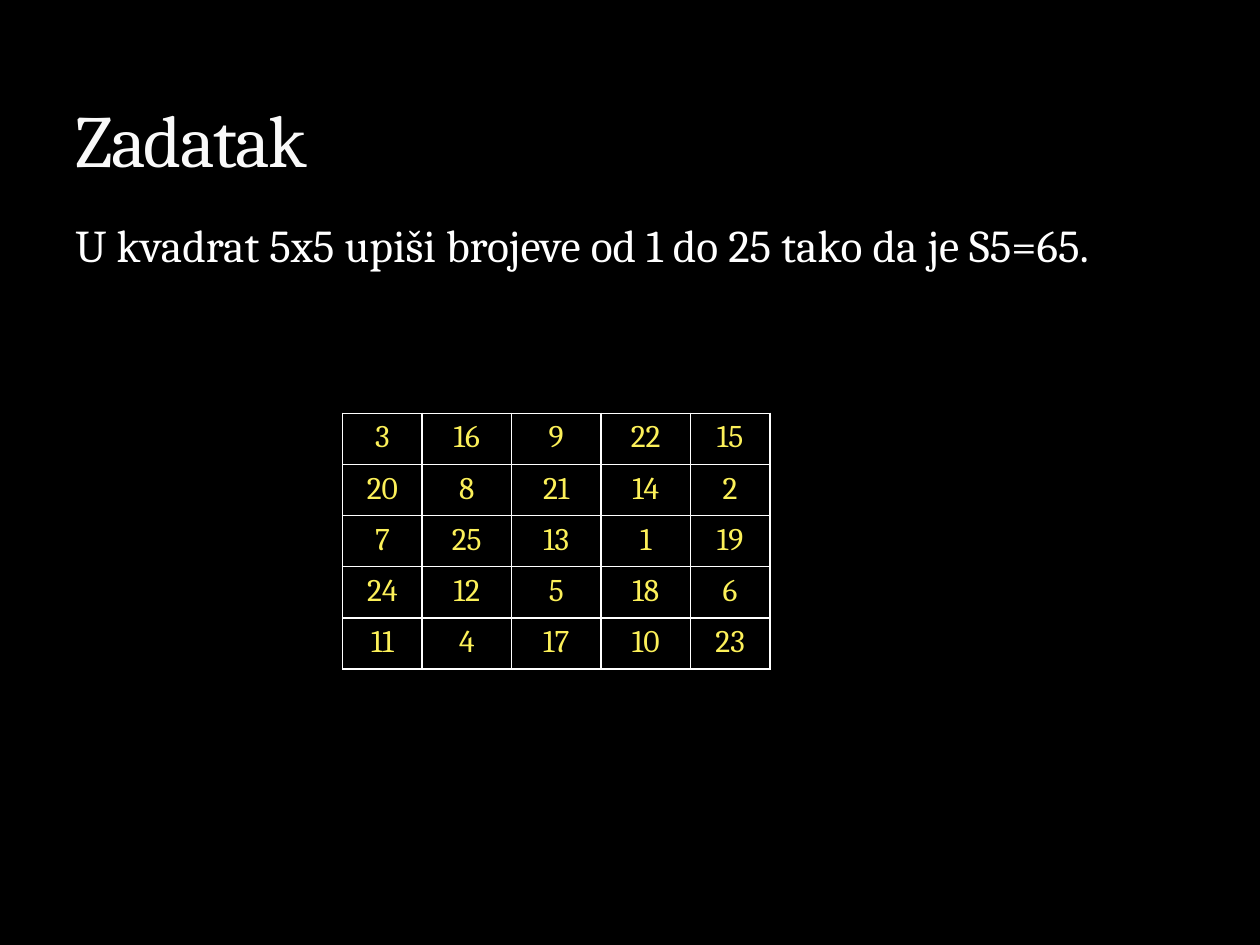
from dataclasses import dataclass

from lxml import etree
from pptx import Presentation
from pptx.dml.color import RGBColor
from pptx.enum.text import MSO_ANCHOR, PP_ALIGN
from pptx.oxml.ns import qn
from pptx.util import Inches, Pt

BOTTOM, TOP = MSO_ANCHOR.BOTTOM, MSO_ANCHOR.TOP
LEFT, CENTER = PP_ALIGN.LEFT, PP_ALIGN.CENTER

HEADING = "Zadatak"
TASK = "U kvadrat 5x5 upiši brojeve od 1 do 25 tako da je S5=65."
MAGIC_SQUARE = [
    [3, 16, 9, 22, 15],
    [20, 8, 21, 14, 2],
    [7, 25, 13, 1, 19],
    [24, 12, 5, 18, 6],
    [11, 4, 17, 10, 23],
]

HEADING_BOX = (0.5, 0.17, 9, 1.33)
TASK_BOX = (0.5, 1.67, 9, 5)
SQUARE_LEFT, SQUARE_TOP = 2.72, 3.28
OUTER_COLUMN, INNER_COLUMN, ROW_HEIGHT = 0.63, 0.71, 0.406


@dataclass(frozen=True)
class Theme:
    font: str = "Cambria"
    background: str = "000000"
    heading: str = "F9F9F9"
    task: str = "FFFFFF"
    number: str = "FCF059"
    grid: str = "FFFFFF"
    heading_size: int = 42
    task_size: int = 26
    number_size: int = 18
    grid_width: int = 1


THEME = Theme()


def style(paragraph, size, color, align):
    paragraph.alignment = align
    for run in paragraph.runs:
        run.font.name = THEME.font
        run.font.size = Pt(size)
        run.font.color.rgb = RGBColor.from_string(color)


def add_borders(cell):
    properties = cell._tc.get_or_add_tcPr()
    for index, side in enumerate(("a:lnL", "a:lnR", "a:lnT", "a:lnB")):
        border = etree.Element(qn(side), w=str(Pt(THEME.grid_width)))
        fill = etree.SubElement(border, qn("a:solidFill"))
        etree.SubElement(fill, qn("a:srgbClr"), val=THEME.grid)
        properties.insert(index, border)


def add_heading(slide):
    heading = slide.shapes.title
    heading.left, heading.top, heading.width, heading.height = map(Inches, HEADING_BOX)
    frame = heading.text_frame
    frame.text = HEADING
    frame.vertical_anchor = BOTTOM
    style(frame.paragraphs[0], THEME.heading_size, THEME.heading, LEFT)
    frame.paragraphs[0].runs[0].font._element.set("spc", "-100")


def add_task(slide):
    frame = slide.shapes.add_textbox(*map(Inches, TASK_BOX)).text_frame
    frame.word_wrap = True
    frame.vertical_anchor = TOP
    frame.text = TASK
    frame.paragraphs[0].space_before = Pt(6)
    style(frame.paragraphs[0], THEME.task_size, THEME.task, LEFT)


def add_square(slide):
    order = len(MAGIC_SQUARE)
    widths = [OUTER_COLUMN, *[INNER_COLUMN] * (order - 2), OUTER_COLUMN]
    box = (SQUARE_LEFT, SQUARE_TOP, sum(widths), ROW_HEIGHT * order)
    square = slide.shapes.add_table(order, order, *map(Inches, box)).table
    square.first_row = square.horz_banding = False
    for column, width in zip(square.columns, widths):
        column.width = Inches(width)
    for row, numbers in zip(square.rows, MAGIC_SQUARE):
        row.height = Inches(ROW_HEIGHT)
        for cell, number in zip(row.cells, numbers):
            cell.text = str(number)
            cell.fill.background()
            style(cell.text_frame.paragraphs[0], THEME.number_size, THEME.number, CENTER)
            add_borders(cell)


def main():
    deck = Presentation()
    deck.slide_width, deck.slide_height = Inches(10), Inches(7.5)
    slide = deck.slides.add_slide(deck.slide_layouts[5])
    slide.background.fill.solid()
    slide.background.fill.fore_color.rgb = RGBColor.from_string(THEME.background)
    add_heading(slide)
    add_task(slide)
    add_square(slide)
    deck.save("out.pptx")


if __name__ == "__main__":
    main()
